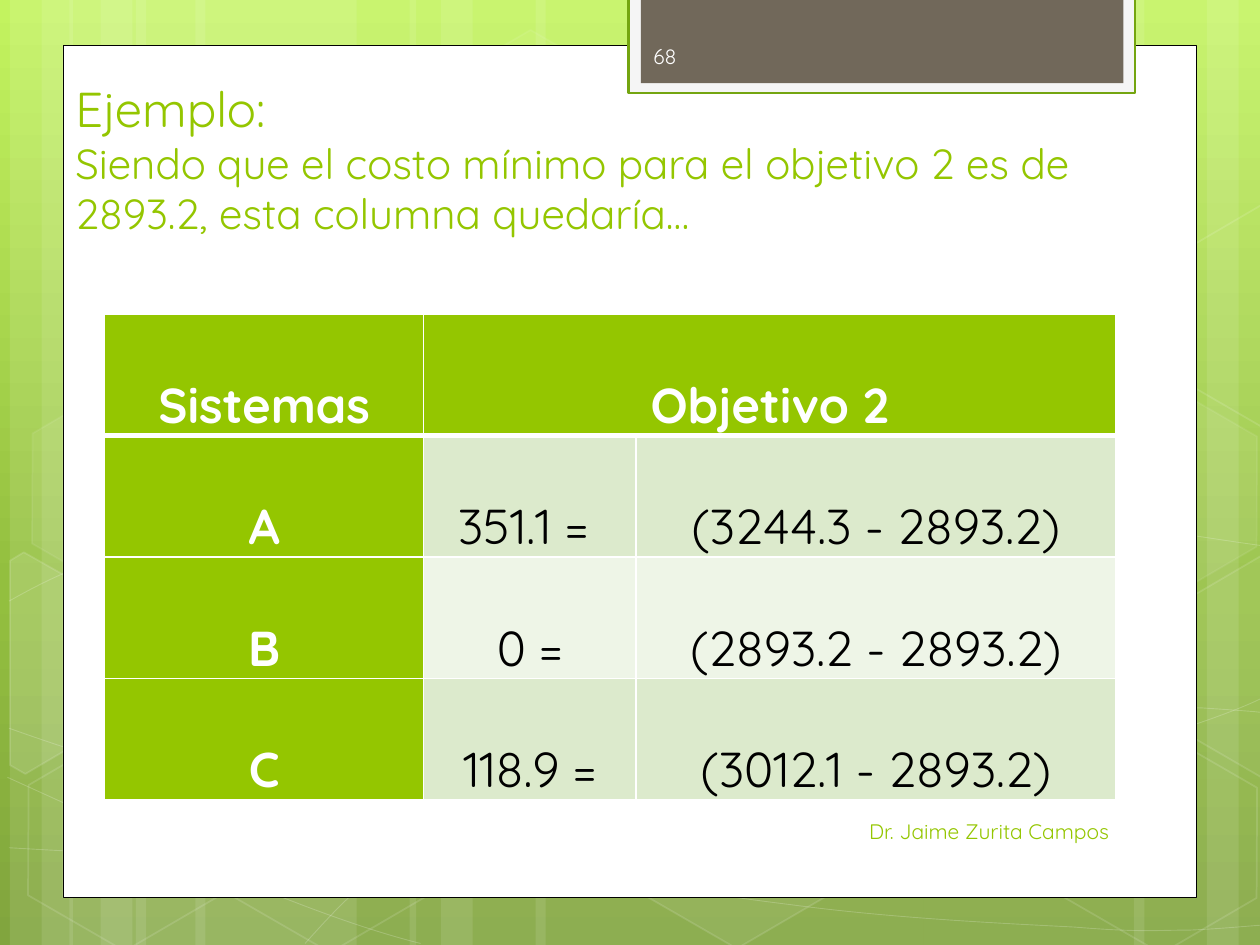
from copy import deepcopy
from math import cos, radians, sin

from pptx import Presentation
from pptx.dml.color import RGBColor
from pptx.enum.shapes import MSO_SHAPE as Shape
from pptx.enum.text import MSO_ANCHOR as Anchor, PP_ALIGN as Align
from pptx.oxml.ns import qn
from pptx.oxml.xmlchemy import OxmlElement
from pptx.util import Cm, Pt

FONT = "Quicksand"
WHITE = RGBColor(0xFF, 0xFF, 0xFF)
OFF_WHITE = RGBColor(0xFE, 0xFE, 0xFE)
BLACK = RGBColor(0, 0, 0)
GREEN = RGBColor(0x94, 0xC6, 0x00)
DARK_GREEN = RGBColor(0x74, 0xA5, 0x10)
BROWN = RGBColor(0x71, 0x68, 0x5A)
PALE_GRAY = RGBColor(0xF5, 0xF5, 0xF5)
BANDS = [RGBColor(0xDC, 0xEA, 0xCC), RGBColor(0xEE, 0xF5, 0xE7)]
SKY = [(0, RGBColor(0xC3, 0xF3, 0x5F)),
       (0.62, RGBColor(0x93, 0xBF, 0x3F)),
       (1, RGBColor(0x81, 0xA5, 0x3E))]

TITLE = [("Ejemplo:", 28),
         ("Siendo que el costo mínimo para el objetivo 2 es de 2893.2, "
          "esta columna quedaría…", 24)]
AUTHOR = "Dr. Jaime Zurita Campos"
NUMBER = "68"
ROWS = [("Sistemas", "Objetivo 2", ""),
        ("A", "351.1 = ", "(3244.3 - 2893.2)"),
        ("B", "0 =", "(2893.2 - 2893.2)"),
        ("C", "118.9 =", "(3012.1 - 2893.2)")]
COLUMNS = [6.43, 4.28, 9.67]
ROW_HEIGHT = 2.45

# All places below are in centimetres.
STRIPS = [(2.74, 4.45), (0.2, 1.27), (0.84, 2.11), (3.94, 4.45),
          (1.4, 1.27), (2.03, 2.11), (18.62, 4.45), (24.33, 1.27),
          (22.86, 2.11), (10.8, 7.82), (8.26, 1.27), (8.89, 2.11)]
# Start point, then two handles and an end point for each Bézier piece.
CURVES = [
    [(0.18, 17.09), (1.55, 17.17), (2.92, 17.25), (4.83, 17.22),
     (6.73, 17.2), (9.09, 17.15), (11.63, 16.89),
     (14.17, 16.64), (17.78, 16.15), (20.12, 15.67),
     (22.43, 15.19), (24.82, 14.43), (25.58, 14)],
    [(0.18, 12.12), (0.91, 11.71), (1.65, 11.33), (3.07, 10.95),
     (4.52, 10.57), (6.58, 10.01), (8.81, 9.83),
     (11.07, 9.65), (13.82, 9.63), (16.61, 9.83),
     (19.41, 10.03), (24.05, 10.82), (25.58, 11.02)],
    [(0.15, 15.67), (3.23, 17.07), (6.27, 18.47), (8.48, 19.02)],
    [(0.18, 14.68), (0.97, 14.96), (1.78, 15.24), (3.25, 15.65),
     (4.72, 16.03), (6.93, 16.66), (9.07, 17.09),
     (11.18, 17.53), (13.84, 17.98), (15.95, 18.24),
     (18.06, 18.52), (20.32, 18.62), (21.67, 18.69),
     (22.99, 18.8), (23.34, 18.75), (24, 18.75),
     (24.66, 18.72), (25.12, 18.67), (25.58, 18.64)],
    [(6.15, 19.02), (6.6, 18.52), (7.06, 18.01), (7.67, 17.55),
     (8.28, 17.09), (9.14, 16.59), (9.86, 16.23),
     (10.57, 15.88), (11, 15.72), (11.94, 15.47),
     (12.85, 15.21), (14.55, 14.86), (15.44, 14.68),
     (16.36, 14.5), (16.48, 14.5), (17.27, 14.45),
     (18.06, 14.38), (19.3, 14.3), (20.17, 14.27),
     (21.06, 14.25), (22.5, 14.27), (22.5, 14.27),
     (23.07, 14.27), (23.64, 14.27), (24.21, 14.27),
     (24.66, 14.3), (25.1, 14.33), (25.32, 14.35),
     (25.55, 14.38), (25.48, 14.35), (25.55, 14.38)],
]
TILT = 30
# Left, top, fill opacity and line opacity in percent.
HEXAGONS = [(8.48, 0.91, 4, 8), (12.62, 14.96, 6, 12), (0.28, 15.01, 0, 12),
            (0.36, 7.92, 7, 8), (4.42, 15.04, 0, 12), (19.13, 11.51, 10, 12),
            (21.18, 15.06, 0, 12), (21.18, 7.98, 7, 8)]
LEFT_CUT = [(0.2, 11.3), (0.48, 11.13), (2.44, 12.24), (2.41, 14.48),
            (0.51, 15.6), (0.2, 15.42)]
RIGHT_CUT = [(23.52, 12.32), (25.43, 11.2), (25.63, 11.33), (25.63, 15.57),
             (25.45, 15.67), (23.52, 14.55)]
UPPER_CUT = [(x, y - 7.07) for x, y in RIGHT_CUT]
# Corners as seen, centre of the tilted frame, fill opacity.
CUT_HEXAGONS = [(LEFT_CUT, (0.91, 13.59), 10),
                (RIGHT_CUT, (25.02, 13.21), 4),
                (UPPER_CUT, (25.02, 6.14), 0)]


def set_opacity(solid_fill, percent):
    alpha = OxmlElement("a:alpha")
    alpha.set("val", str(percent * 1000))
    solid_fill[0].append(alpha)


def paint(shape, fill=None, opacity=100, line=None, width=1, line_opacity=100):
    shape.shadow.inherit = False
    properties = shape._element.spPr
    if fill is None or opacity == 0:
        shape.fill.background()
    else:
        shape.fill.solid()
        shape.fill.fore_color.rgb = fill
        if opacity < 100:
            set_opacity(properties.find(qn("a:solidFill")), opacity)
    if line is None:
        shape.line.fill.background()
    else:
        shape.line.color.rgb = line
        shape.line.width = Pt(width)
        if line_opacity < 100:
            set_opacity(properties.find(qn("a:ln")).find(qn("a:solidFill")), line_opacity)


def add_preset(page, kind, place, **look):
    shape = page.shapes.add_shape(kind, *map(Cm, place))
    paint(shape, **look)
    return shape


def add_outline(page, points, close, **look):
    start, *rest = [(Cm(x), Cm(y)) for x, y in points]
    builder = page.shapes.build_freeform(*start)
    builder.add_line_segments(rest, close=close)
    shape = builder.convert_to_shape()
    paint(shape, **look)
    return shape


def bend(shape):
    """Join every three straight segments into one cubic Bézier piece."""
    segments = list(shape._element.spPr.iter(qn("a:lnTo")))
    for first in range(0, len(segments), 3):
        piece = segments[first:first + 3]
        curve = OxmlElement("a:cubicBezTo")
        piece[0].addprevious(curve)
        for segment in piece:
            curve.append(segment[0])
            segment.getparent().remove(segment)


def untilt(points, center):
    turn = radians(TILT)
    offsets = [(x - center[0], y - center[1]) for x, y in points]
    return [(center[0] + x * cos(turn) + y * sin(turn),
             center[1] - x * sin(turn) + y * cos(turn)) for x, y in offsets]


def style_span(span, size, color, bold=False):
    span.font.name, span.font.size, span.font.bold = FONT, Pt(size), bold
    span.font.color.rgb = color


def add_text(page, place, parts, color, anchor=Anchor.MIDDLE, align=Align.LEFT):
    frame = page.shapes.add_textbox(*map(Cm, place)).text_frame
    frame.word_wrap = True
    frame.vertical_anchor = anchor
    para = frame.paragraphs[0]
    para.text = "\v".join(text for text, size in parts)
    para.alignment = align
    for span, (text, size) in zip(para.runs, parts):
        style_span(span, size, color)


def add_border(cell, side, width):
    line = OxmlElement(f"a:ln{side}")
    line.set("w", str(Pt(width)))
    solid, color = OxmlElement("a:solidFill"), OxmlElement("a:srgbClr")
    color.set("val", str(WHITE))
    solid.append(color)
    line.append(solid)
    cell._tc.get_or_add_tcPr().append(line)


def add_systems_table(page):
    table = page.shapes.add_table(len(ROWS), len(COLUMNS), Cm(2.11), Cm(6.33),
                                  Cm(sum(COLUMNS)), Cm(ROW_HEIGHT * len(ROWS))).table
    for column, width in zip(table.columns, COLUMNS):
        column.width = Cm(width)
    for r, texts in enumerate(ROWS):
        table.rows[r].height = Cm(ROW_HEIGHT)
        for c, text in enumerate(texts):
            cell = table.cell(r, c)
            heading = r == 0 or c == 0
            for side in "LRTB":
                thick = (r, side) in ((0, "B"), (1, "T"))
                add_border(cell, side, 3 if thick else 1)
            cell.fill.solid()
            cell.fill.fore_color.rgb = GREEN if heading else BANDS[(r - 1) % 2]
            cell.vertical_anchor = Anchor.BOTTOM
            cell.margin_left = cell.margin_right = Cm(0.13)
            cell.margin_top = cell.margin_bottom = 0
            para = cell.text_frame.paragraphs[0]
            para.text = text
            para.alignment, para.line_spacing = Align.CENTER, 1.15
            for span in para.runs:
                style_span(span, 28, WHITE if heading else BLACK, heading)
    table.cell(0, 1).merge(table.cell(0, 2))


def add_background(page):
    fill = page.background.fill
    fill.gradient()
    fill.gradient_angle = 270
    stop_list = fill.gradient_stops[0]._gs.getparent()
    stop_list.append(deepcopy(stop_list[0]))
    for stop, (position, color) in zip(fill.gradient_stops, SKY):
        stop.position, stop.color.rgb = position, color
    for left, width in STRIPS:
        add_preset(page, Shape.RECTANGLE, (left, 0, width, 19.05), fill=WHITE, opacity=10)
    for nodes in CURVES:
        bend(add_outline(page, nodes, False, line=WHITE, width=0.5, line_opacity=20))
    for left, top, opacity, line_opacity in HEXAGONS:
        hexagon = add_preset(page, Shape.HEXAGON, (left, top, 4.45, 3.86), fill=WHITE,
                             opacity=opacity, line=WHITE, line_opacity=line_opacity)
        hexagon.adjustments[0] = 0.285
        hexagon.rotation = TILT
    for points, center, opacity in CUT_HEXAGONS:
        cut = add_outline(page, untilt(points, center), True, fill=WHITE,
                          opacity=opacity, line=WHITE, line_opacity=12)
        cut.rotation = TILT


def main():
    deck = Presentation()
    deck.slide_width, deck.slide_height = Cm(25.4), Cm(19.05)
    page = deck.slides.add_slide(deck.slide_layouts[6])
    add_background(page)
    add_preset(page, Shape.RECTANGLE, (1.27, 0.91, 22.86, 17.19),
               fill=WHITE, line=BLACK, width=0.5)
    add_preset(page, Shape.RECTANGLE, (12.67, -0.05, 10.21, 1.93),
               fill=PALE_GRAY, line=DARK_GREEN, width=1.25)
    add_preset(page, Shape.RECTANGLE, (12.92, -0.05, 9.73, 1.73), fill=BROWN)
    add_text(page, (1.27, 0.76, 20.75, 4.17), TITLE, GREEN, Anchor.BOTTOM)
    add_text(page, (12.9, 16.24, 9.71, 1.02), [(AUTHOR, 12)], GREEN, align=Align.RIGHT)
    add_text(page, (12.92, 0.62, 3.71, 1.02), [(NUMBER, 12)], OFF_WHITE)
    add_systems_table(page)
    deck.save("out.pptx")


if __name__ == "__main__":
    main()
